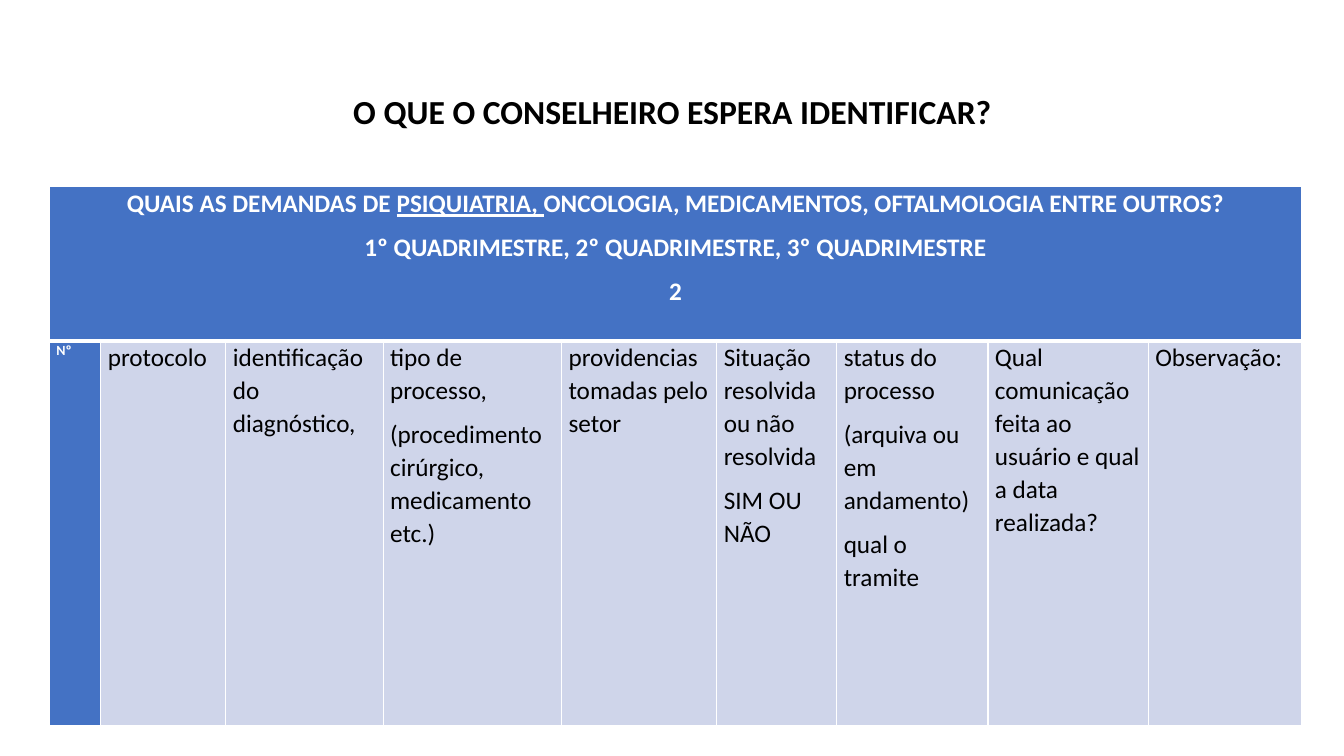
from dataclasses import dataclass

from lxml import etree
from pptx import Presentation
from pptx.dml.color import RGBColor
from pptx.enum.text import MSO_ANCHOR, PP_ALIGN
from pptx.oxml.ns import qn
from pptx.util import Inches, Pt

CENTER, LEFT = PP_ALIGN.CENTER, PP_ALIGN.LEFT
MIDDLE, TOP = MSO_ANCHOR.MIDDLE, MSO_ANCHOR.TOP


@dataclass(frozen=True)
class Theme:
    font: str = "Calibri"
    black: str = "000000"
    white: str = "FFFFFF"
    blue: str = "4472C4"
    pale: str = "CFD5EA"
    title_size: int = 24
    body_size: int = 18
    number_size: int = 10
    thin: int = 1
    thick: int = 3


THEME = Theme()

# The grid has columns and rows of one inch.
SLIDE_COLUMNS, SLIDE_ROWS = 13.33, 7.5
TITLE_BOX = (0.92, 0.4, 11.5, 1.45)
TABLE_LEFT, TABLE_TOP = 0.49, 1.85
COLUMN_WIDTHS = (0.51, 1.24, 1.56, 1.77, 1.54, 1.19, 1.5, 1.59, 1.52)
ROW_HEIGHTS = (1.53, 3.82)

TITLE = "O QUE O CONSELHEIRO ESPERA IDENTIFICAR?"
UNDERLINED = "PSIQUIATRIA, "
HEADING = [
    ["QUAIS AS DEMANDAS DE ", UNDERLINED,
     "ONCOLOGIA, MEDICAMENTOS, OFTALMOLOGIA ENTRE OUTROS?"],
    ["1º QUADRIMESTRE, 2º QUADRIMESTRE, 3º QUADRIMESTRE"],
    ["2"],
]
FIELDS = [
    [["Nº"]],
    [["protocolo"]],
    [["identificação do diagnóstico,"]],
    [["tipo de processo,"], ["(procedimento cirúrgico, medicamento etc.)"]],
    [["providencias tomadas pelo setor"]],
    [["Situação resolvida ou não resolvida"], ["SIM OU NÃO"]],
    [["status do processo"], ["(arquiva ou em andamento)"], ["qual o tramite"]],
    [["Qual comunicação feita ao usuário e qual a data realizada?"]],
    [["Observação:"]],
]


def set_attributes(target, values):
    for name, value in values.items():
        setattr(target, name, value)


def write_paragraphs(frame, paragraphs, size, color, bold, layout):
    """Fill a text frame; each paragraph is a list of run texts."""
    for index, texts in enumerate(paragraphs):
        paragraph = frame.add_paragraph() if index else frame.paragraphs[0]
        set_attributes(paragraph, layout)
        for text in texts:
            run = paragraph.add_run()
            run.text = text
            set_attributes(run.font, {
                "name": THEME.font, "size": Pt(size), "bold": bold,
                "underline": text == UNDERLINED})
            run.font.color.rgb = RGBColor.from_string(color)


def add_title(slide):
    shape = slide.shapes.add_textbox(*map(Inches, TITLE_BOX))
    set_attributes(shape.text_frame,
                   {"word_wrap": True, "vertical_anchor": MIDDLE})
    write_paragraphs(shape.text_frame, [[TITLE]], THEME.title_size, THEME.black,
                     True, {"alignment": CENTER, "line_spacing": 0.9})


def set_borders(cell, widths):
    """Draw white borders, given as widths by side, ahead of the cell's fill."""
    properties = cell._tc.get_or_add_tcPr()
    for index, (side, width) in enumerate(widths.items()):
        line = etree.Element(qn(f"a:ln{side}"), w=str(Pt(width)))
        fill = etree.SubElement(line, qn("a:solidFill"))
        etree.SubElement(fill, qn("a:srgbClr"), val=THEME.white)
        properties.insert(index, line)


def format_cell(cell, fill, top, bottom):
    set_attributes(cell, {
        "margin_left": Inches(0.07), "margin_right": Inches(0.07),
        "margin_top": 0, "margin_bottom": 0, "vertical_anchor": TOP})
    cell.fill.solid()
    cell.fill.fore_color.rgb = RGBColor.from_string(fill)
    set_borders(cell, {"L": THEME.thin, "R": THEME.thin, "T": top, "B": bottom})


def write_cell(cell, paragraphs, size, color, bold, alignment):
    write_paragraphs(cell.text_frame, paragraphs, size, color, bold, {
        "alignment": alignment, "line_spacing": 1.07, "space_after": Pt(8)})


def add_demand_table(slide):
    table = slide.shapes.add_table(
        len(ROW_HEIGHTS), len(COLUMN_WIDTHS),
        Inches(TABLE_LEFT), Inches(TABLE_TOP),
        Inches(sum(COLUMN_WIDTHS)), Inches(sum(ROW_HEIGHTS))).table
    for column, width in zip(table.columns, COLUMN_WIDTHS):
        column.width = Inches(width)
    for row, height in zip(table.rows, ROW_HEIGHTS):
        row.height = Inches(height)

    for index, paragraphs in enumerate(FIELDS):
        is_number = index == 0
        format_cell(table.cell(0, index), THEME.blue, THEME.thin, THEME.thick)
        field = table.cell(1, index)
        format_cell(field, THEME.blue if is_number else THEME.pale,
                    THEME.thick, THEME.thin)
        write_cell(field, paragraphs,
                   THEME.number_size if is_number else THEME.body_size,
                   THEME.white if is_number else THEME.black, is_number, LEFT)

    heading = table.cell(0, 0)
    heading.merge(table.cell(0, len(FIELDS) - 1))
    write_cell(heading, HEADING, THEME.body_size, THEME.white, True, CENTER)


def main():
    presentation = Presentation()
    set_attributes(presentation, {"slide_width": Inches(SLIDE_COLUMNS),
                                  "slide_height": Inches(SLIDE_ROWS)})
    slide = presentation.slides.add_slide(presentation.slide_layouts[6])
    add_title(slide)
    add_demand_table(slide)
    presentation.save("out.pptx")


if __name__ == "__main__":
    main()
